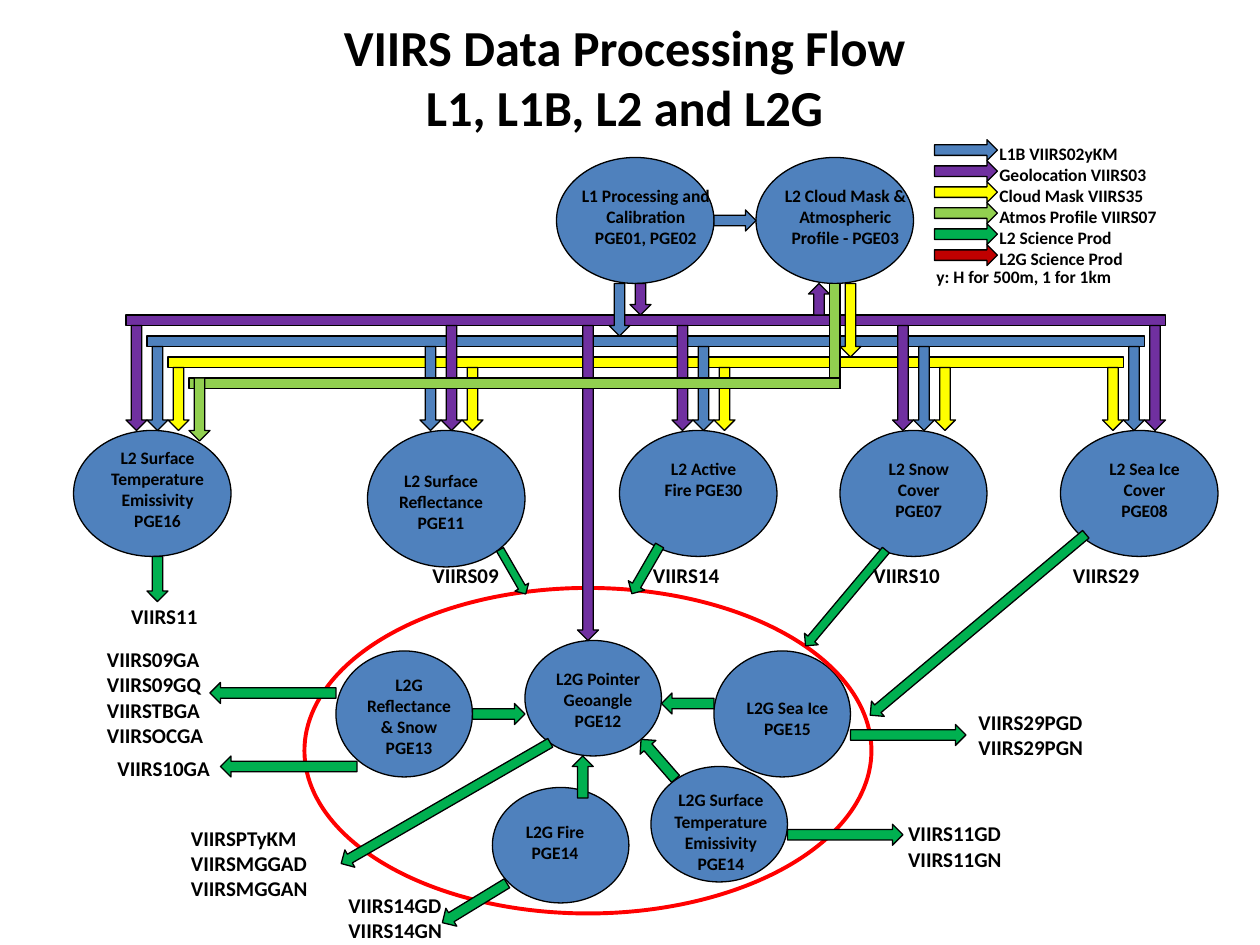
from pptx import Presentation
from pptx.dml.color import RGBColor
from pptx.enum.shapes import MSO_SHAPE
from pptx.enum.text import MSO_ANCHOR, PP_ALIGN
from pptx.util import Inches, Pt

CELL = Inches(1) / 12  # the slide is 120 columns by 90 rows
BLUE, PURPLE, YELLOW = "4F81BD", "7030A0", "FFFF00"
LIME, GREEN, RED, DARK_RED = "92D050", "00B050", "FF0000", "C00000"
DOWN, UP = MSO_SHAPE.DOWN_ARROW, MSO_SHAPE.UP_ARROW
RIGHT, LEFT = MSO_SHAPE.RIGHT_ARROW, MSO_SHAPE.LEFT_ARROW
BAR, OVAL = MSO_SHAPE.RECTANGLE, MSO_SHAPE.OVAL

deck = Presentation()
deck.slide_width, deck.slide_height = round(120 * CELL), round(90 * CELL)
page = deck.slides.add_slide(deck.slide_layouts[6])


def add_figure(shapes, kind, col, row, cols, rows, fill, turn=0, line="000000", weight=0.75):
    """Draw a preset shape on the grid; a fill of None leaves it open."""
    figure = shapes.add_shape(kind, *(round(n * CELL) for n in (col, row, cols, rows)))
    figure.shadow.inherit = False
    figure.rotation = turn
    if fill:
        figure.fill.solid()
        figure.fill.fore_color.rgb = RGBColor.from_string(fill)
    else:
        figure.fill.background()
    figure.line.color.rgb = RGBColor.from_string(line)
    figure.line.width = Pt(weight)


def add_text(shapes, col, row, cols, paragraphs, size, lines=None, align=PP_ALIGN.LEFT):
    """Write bold paragraphs in a box as high as its lines, wrapped ones included."""
    rows = 1.2 + (lines or len(paragraphs)) * size * 0.203
    box = shapes.add_textbox(*(round(n * CELL) for n in (col, row, cols, rows)))
    frame = box.text_frame
    frame.word_wrap = True
    frame.vertical_anchor = MSO_ANCHOR.TOP
    for number, wording in enumerate(paragraphs):
        para = frame.add_paragraph() if number else frame.paragraphs[0]
        para.text = wording
        para.alignment = align
        para.font.name = "Calibri"
        para.font.size = Pt(size)
        para.font.bold = True
        para.font.color.rgb = RGBColor.from_string("000000")


add_text(page.shapes, 14, 0.9, 91, ["VIIRS Data Processing Flow\nL1, L1B, L2 and L2G"],
         28.8, lines=2, align=PP_ALIGN.CENTER)

# Processes: oval (col, row, cols, rows), label (col, row, cols, lines), paragraphs
processes = [
    ((53, 15, 15, 12), (54, 17, 15, 3), ["L1 Processing and Calibration", "PGE01, PGE02"]),
    ((72, 15, 15, 12), (73, 17, 15, 3), ["L2 Cloud Mask & Atmospheric Profile - PGE03"]),
    ((7, 41, 15, 12), (8, 42, 14, 4), ["L2 Surface Temperature Emissivity PGE16"]),
    ((35, 41, 15, 13), (36, 44.2, 12, 3), ["L2 Surface Reflectance PGE11"]),
    ((59, 41, 15, 12), (62, 43, 10, 3), ["L2 Active Fire PGE30"]),
    ((80, 41, 14, 12), (82.8, 43, 9.4, 3), ["L2 Snow Cover PGE07"]),
    ((101, 41, 15, 12), (104, 43, 10, 3), ["L2 Sea Ice Cover PGE08"]),
    ((50, 61, 13, 11), (50.9, 63, 12.1, 3), ["L2G Pointer Geoangle PGE12"]),
    ((32, 62, 13, 12), (32.9, 63.6, 12.1, 4), ["L2G Reflectance", "& Snow", "PGE13"]),
    ((46.9, 75, 13, 11), (46.8, 77.6, 12.1, 2), ["L2G Fire", "PGE14"]),
    ((68, 62, 13, 12), (69, 65.8, 12, 2), ["L2G Sea Ice", "PGE15"]),
    ((62, 73, 13, 11), (62.6, 74.6, 12.1, 4),
     ["L2G Surface Temperature", "Emissivity", "PGE14"]),
]
for oval, (col, row, cols, lines), paragraphs in processes:
    group = page.shapes.add_group_shape()
    add_figure(group.shapes, OVAL, *oval, BLUE)
    add_text(group.shapes, col, row, cols, paragraphs, 10, lines, PP_ALIGN.CENTER)

# Distribution lanes: colour, left column, row, columns of the arrows down to the L2 processes
lanes = [
    (BLUE, 14, 32, [14, 40, 66, 87, 107]),
    (YELLOW, 16, 34, [16, 44, 68, 89, 105]),
    (PURPLE, 12, 30, [12, 42, 64, 85, 109]),
]
for colour, left, row, drops in lanes:
    add_figure(page.shapes, BAR, left, row, 123 - 2 * left, 1, colour)
for colour, left, row, drops in lanes:
    for col in drops:
        add_figure(page.shapes, DOWN, col, row + 1, 2, 40 - row, colour)

# Flows: kind, col, row, cols, rows, colour, rotation
flows = [
    (RIGHT, 68, 20, 4, 2, BLUE, 0),
    (UP, 77, 27, 2, 3, PURPLE, 0),
    (DOWN, 58, 27, 2, 5, BLUE, 0),
    (DOWN, 60, 27, 2, 3, PURPLE, 0),
    (DOWN, 55, 31, 2, 30, PURPLE, 0),
    (BAR, 79, 27, 1, 10, LIME, 0),
    (DOWN, 80, 27, 2, 7, YELLOW, 0),
    (BAR, 18, 36, 62, 1, LIME, 0),
    (DOWN, 18, 36, 2, 6, LIME, 0),
    # L2 products
    (DOWN, 14, 53, 2, 4.3, GREEN, 0),
    (DOWN, 48.1, 52, 1.5, 4.9, GREEN, 330),
    (DOWN, 60.6, 51.6, 1.8, 5.3, GREEN, 30),
    (DOWN, 79.7, 51, 1.7, 11.9, GREEN, 40),
    (DOWN, 92.2, 46.1, 1.9, 26.8, GREEN, 50),
    # Into the L2G pointer
    (RIGHT, 45, 67, 5, 2, GREEN, 0),
    (LEFT, 63, 66, 5, 2, GREEN, 0),
    (UP, 54.5, 72, 2, 4, GREEN, 0),
    (RIGHT, 60.2, 71.3, 5, 2, GREEN, 228.9),
    # L2G products
    (LEFT, 20, 65, 12, 2, GREEN, 0),
    (LEFT, 21, 72, 13, 2, GREEN, 0),
    (RIGHT, 81, 69, 11, 2, GREEN, 0),
    (RIGHT, 75, 78.5, 11, 2, GREEN, 0),
    (RIGHT, 41.6, 85, 7.2, 2, GREEN, 148.6),
    (DOWN, 41.5, 65, 1.9, 23, GREEN, 60),
]
add_figure(page.shapes, OVAL, 29, 56, 54, 31, None, line=RED, weight=2.25)
for flow in flows:
    add_figure(page.shapes, *flow)

# Legend
legend = [
    (BLUE, "L1B VIIRS02yKM"),
    (PURPLE, "Geolocation VIIRS03"),
    (YELLOW, "Cloud Mask VIIRS35"),
    (LIME, "Atmos Profile VIIRS07"),
    (GREEN, "L2 Science Prod"),
    (DARK_RED, "L2G Science Prod"),
]
group = page.shapes.add_group_shape()
for number, (colour, meaning) in enumerate(legend):
    add_figure(group.shapes, RIGHT, 89, 13.3 + 2 * number, 6, 2, colour)
add_text(group.shapes, 94, 13, 20, [meaning for colour, meaning in legend], 10)
add_text(page.shapes, 88, 24.7, 31, ["y: H for 500m, 1 for 1km"], 10)

# Product names: col, row, cols, paragraphs
products = [
    (11.3, 56.9, 9, ["VIIRS11"]),
    (40, 53, 10, ["VIIRS09"]),
    (61, 53, 10, ["VIIRS14"]),
    (82, 53, 10, ["VIIRS10"]),
    (101, 53, 10, ["VIIRS29"]),
    (9, 61, 13, ["VIIRS09GA", "VIIRS09GQ", "VIIRSTBGA", "VIIRSOCGA"]),
    (10, 71.4, 13, ["VIIRS10GA"]),
    (17, 78, 15, ["VIIRSPTyKM", "VIIRSMGGAD", "VIIRSMGGAN"]),
    (32, 84.4, 13, ["VIIRS14GD", "VIIRS14GN"]),
    (92, 67, 15, ["VIIRS29PGD", "VIIRS29PGN"]),
    (85.3, 77.6, 11.4, ["VIIRS11GD", "VIIRS11GN"]),
]
for col, row, cols, names in products:
    add_text(page.shapes, col, row, cols, names, 12)

deck.save("out.pptx")
